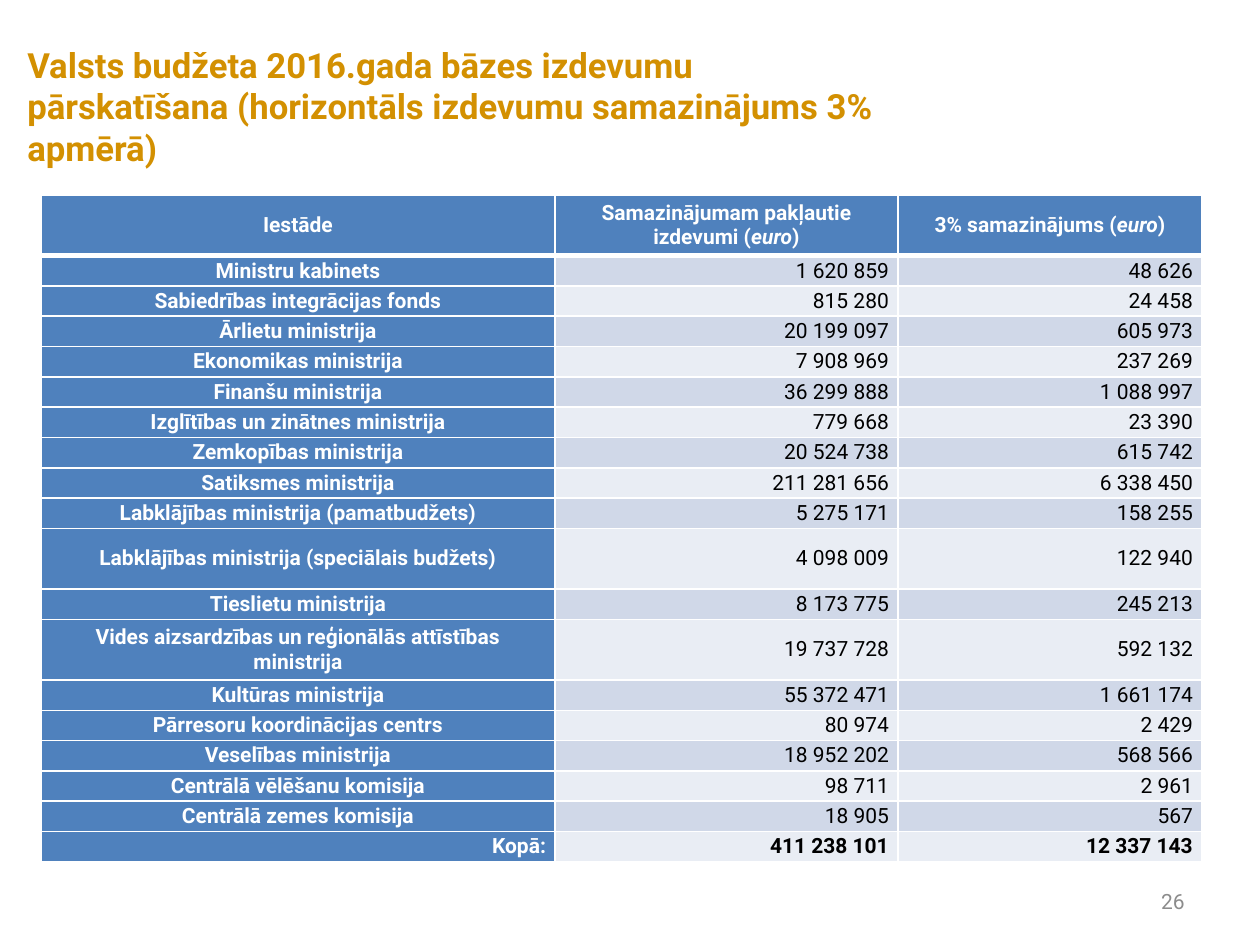
from lxml.etree import SubElement
from pptx import Presentation
from pptx.dml.color import RGBColor
from pptx.enum.text import MSO_ANCHOR as Anchor, PP_ALIGN as Align
from pptx.oxml.ns import qn
from pptx.util import Pt

PX = 914400 // 126  # EMU in one px
FONT = "Roboto"
COLORS = {
    "title": "D39001", "number": "8C8C8C", "head": "4F81BD", "odd": "D0D8E8",
    "even": "E9EDF4", "white": "FFFFFF", "black": "000000",
}

# Content: *...* marks italics
TITLE = ("Valsts budžeta 2016.gada bāzes izdevumu pārskatīšana "
         "(horizontāls izdevumu samazinājums 3% apmērā)")
PAGE_NUMBER = "26"
HEADER = ("Iestāde", "Samazinājumam pakļautie izdevumi (*euro*)", "3% samazinājums (*euro*)")
BUDGETS = [
    ("Ministru kabinets", 1620859, 48626),
    ("Sabiedrības integrācijas fonds", 815280, 24458),
    ("Ārlietu ministrija", 20199097, 605973),
    ("Ekonomikas ministrija", 7908969, 237269),
    ("Finanšu ministrija", 36299888, 1088997),
    ("Izglītības un zinātnes ministrija", 779668, 23390),
    ("Zemkopības ministrija", 20524738, 615742),
    ("Satiksmes ministrija", 211281656, 6338450),
    ("Labklājības ministrija (pamatbudžets)", 5275171, 158255),
    ("Labklājības ministrija (speciālais budžets)", 4098009, 122940),
    ("Tieslietu ministrija", 8173775, 245213),
    ("Vides aizsardzības un reģionālās attīstības ministrija", 19737728, 592132),
    ("Kultūras ministrija", 55372471, 1661174),
    ("Pārresoru koordinācijas centrs", 80974, 2429),
    ("Veselības ministrija", 18952202, 568566),
    ("Centrālā vēlēšanu komisija", 98711, 2961),
    ("Centrālā zemes komisija", 18905, 567),
    ("Kopā:", 411238101, 12337143),
]

# Layout in px
TITLE_BOX = (15, 43, 888, 126)
NUMBER_BOX = (903, 876, 294, 50)
TABLE_LEFT, TABLE_TOP, TABLE_HEIGHT = 41, 195, 667
COLUMN_WIDTHS = (514, 343, 304)
DOUBLE_ROWS = (0, 10, 12)
CELL_INSET = 9


def write(frame, text, size=12, color="black", bold=False, align=Align.LEFT):
    frame.word_wrap = True
    para = frame.paragraphs[0]
    para.alignment = align
    for index, part in enumerate(text.split("*")):
        if part:
            span = para.add_run()
            span.text = part
            font = span.font
            font.name, font.size, font.bold = FONT, Pt(size), bold
            font.italic = index % 2 == 1
            font.color.rgb = RGBColor.from_string(COLORS[color])


def add_text(page, place, text, **style):
    box = page.shapes.add_textbox(*(value * PX for value in place))
    box.text_frame.vertical_anchor = Anchor.MIDDLE
    write(box.text_frame, text, **style)


def add_borders(cell, top, bottom):
    properties = cell._tc.get_or_add_tcPr()
    for side, width in (("L", 1), ("R", 1), ("T", top), ("B", bottom)):
        line = SubElement(properties, qn(f"a:ln{side}"), w=str(Pt(width)))
        fill = SubElement(line, qn("a:solidFill"))
        SubElement(fill, qn("a:srgbClr"), val=COLORS["white"])


def fill_cell(cell, row, column, value):
    cell.margin_left = cell.margin_right = CELL_INSET * PX
    cell.margin_top = cell.margin_bottom = 0
    cell.vertical_anchor = Anchor.MIDDLE
    add_borders(cell, top=3 if row == 1 else 1, bottom=3 if row == 0 else 1)

    is_head = row == 0 or column == 0
    is_total = row == len(BUDGETS)
    band = "head" if is_head else "odd" if row % 2 else "even"
    cell.fill.solid()
    cell.fill.fore_color.rgb = RGBColor.from_string(COLORS[band])

    text = value if isinstance(value, str) else f"{value:,}".replace(",", " ")
    write(cell.text_frame, text, bold=is_head or is_total,
          color="white" if is_head else "black",
          align=Align.CENTER if is_head and not is_total else Align.RIGHT)


def add_budget_table(page):
    rows = [HEADER, *BUDGETS]
    unit = TABLE_HEIGHT * PX // (len(rows) + len(DOUBLE_ROWS))
    table = page.shapes.add_table(
        len(rows), len(HEADER), TABLE_LEFT * PX, TABLE_TOP * PX,
        sum(COLUMN_WIDTHS) * PX, TABLE_HEIGHT * PX).table
    for column, width in zip(table.columns, COLUMN_WIDTHS):
        column.width = width * PX
    for row, values in enumerate(rows):
        table.rows[row].height = unit * (2 if row in DOUBLE_ROWS else 1)
        for column, value in enumerate(values):
            fill_cell(table.cell(row, column), row, column, value)


def main():
    deck = Presentation()
    deck.slide_width, deck.slide_height = 1260 * PX, 945 * PX
    page = deck.slides.add_slide(deck.slide_layouts[6])
    add_text(page, NUMBER_BOX, PAGE_NUMBER, color="number", align=Align.RIGHT)
    add_text(page, TITLE_BOX, TITLE, size=19.8, color="title", bold=True)
    add_budget_table(page)
    deck.save("out.pptx")


if __name__ == "__main__":
    main()
